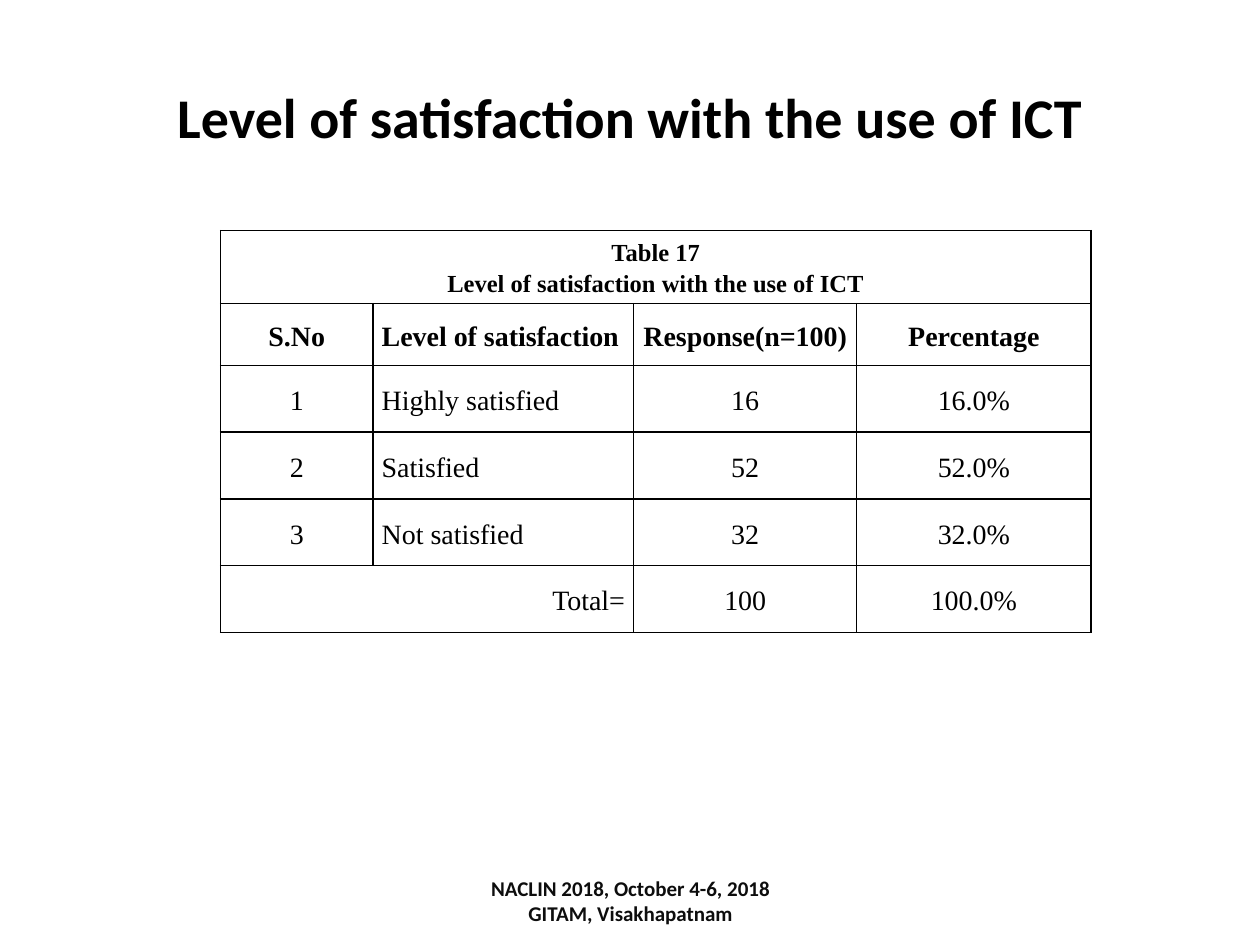
from lxml.etree import SubElement
from pptx import Presentation
from pptx.dml.color import RGBColor as Color
from pptx.enum.text import MSO_ANCHOR as Anchor, PP_ALIGN as Align
from pptx.oxml.ns import qn
from pptx.util import Inches, Pt

COLORS = {"text": "000000", "footer": "0D0D0D", "border": "000000", "cell": "FFFFFF"}


def write(frame, text, font="Times New Roman", size=16, bold=False,
          color="text", align=Align.CENTER, spacing=None):
    for index, line in enumerate(text.split("\n")):
        para = frame.add_paragraph() if index else frame.paragraphs[0]
        para.alignment = align
        if spacing:
            para.line_spacing = spacing
        span = para.add_run()
        span.text = line
        span.font.name = font
        span.font.size = Pt(size)
        span.font.bold = bold
        span.font.color.rgb = Color.from_string(COLORS[color])


deck = Presentation()
deck.slide_width, deck.slide_height = Inches(10), Inches(7.5)
width, height = deck.slide_width, deck.slide_height
page = deck.slides.add_slide(deck.slide_layouts[5])

title = page.shapes.title
title.left, title.top = int(width * 0.05), int(height * 0.04)
title.width, title.height = int(width * 0.9), Inches(1.25)
title.text_frame.vertical_anchor = Anchor.MIDDLE
write(title.text_frame, "Level of satisfaction with the use of ICT",
      font="Calibri", size=32, bold=True)

rows = [
    ["Table 17\nLevel of satisfaction with the use of ICT", "", "", ""],
    ["S.No", "Level of satisfaction", "Response(n=100)", "Percentage"],
    ["1", "Highly satisfied", "16", "16.0%"],
    ["2", "Satisfied", "52", "52.0%"],
    ["3", "Not satisfied", "32", "32.0%"],
    ["Total=", "", "100", "100.0%"],
]
column_widths = [1.21, 2.07, 1.77, 1.86]
row_heights = [0.58, 0.49] + [0.53] * 4
total_row = len(rows) - 1

table = page.shapes.add_table(
    len(rows), len(column_widths), Inches(1.75), Inches(1.83),
    Inches(sum(column_widths)), Inches(sum(row_heights))).table
table.first_row = table.horz_banding = False
for column, column_width in zip(table.columns, column_widths):
    column.width = Inches(column_width)
for row, row_height in zip(table.rows, row_heights):
    row.height = Inches(row_height)
table.cell(0, 0).merge(table.cell(0, 3))
table.cell(total_row, 0).merge(table.cell(total_row, 1))

for row_index, texts in enumerate(rows):
    for column_index, text in enumerate(texts):
        cell = table.cell(row_index, column_index)
        cell.margin_left = cell.margin_right = Inches(0.07)
        cell.margin_top = cell.margin_bottom = 0
        cell.vertical_anchor = Anchor.MIDDLE
        properties = cell._tc.get_or_add_tcPr()
        for side in ("lnL", "lnR", "lnT", "lnB"):
            line = SubElement(properties, qn(f"a:{side}"), w=str(Pt(1)))
            paint = SubElement(line, qn("a:solidFill"))
            SubElement(paint, qn("a:srgbClr"), val=COLORS["border"])
        cell.fill.solid()
        cell.fill.fore_color.rgb = Color.from_string(COLORS["cell"])
        if not text:
            continue
        align = Align.CENTER
        if text == "Total=":
            align = Align.RIGHT
        elif column_index == 1:
            align = Align.LEFT
        write(cell.text_frame, text, size=16 if row_index else 14,
              bold=row_index < 2, align=align, spacing=1.15)

footer = page.shapes.add_textbox(Inches(3.42), Inches(6.95), Inches(3.17), Inches(0.4))
footer.text_frame.word_wrap = True
footer.text_frame.vertical_anchor = Anchor.MIDDLE
write(footer.text_frame, "NACLIN 2018, October 4-6, 2018\nGITAM, Visakhapatnam",
      font="Calibri", size=12, bold=True, color="footer")

deck.save("out.pptx")
